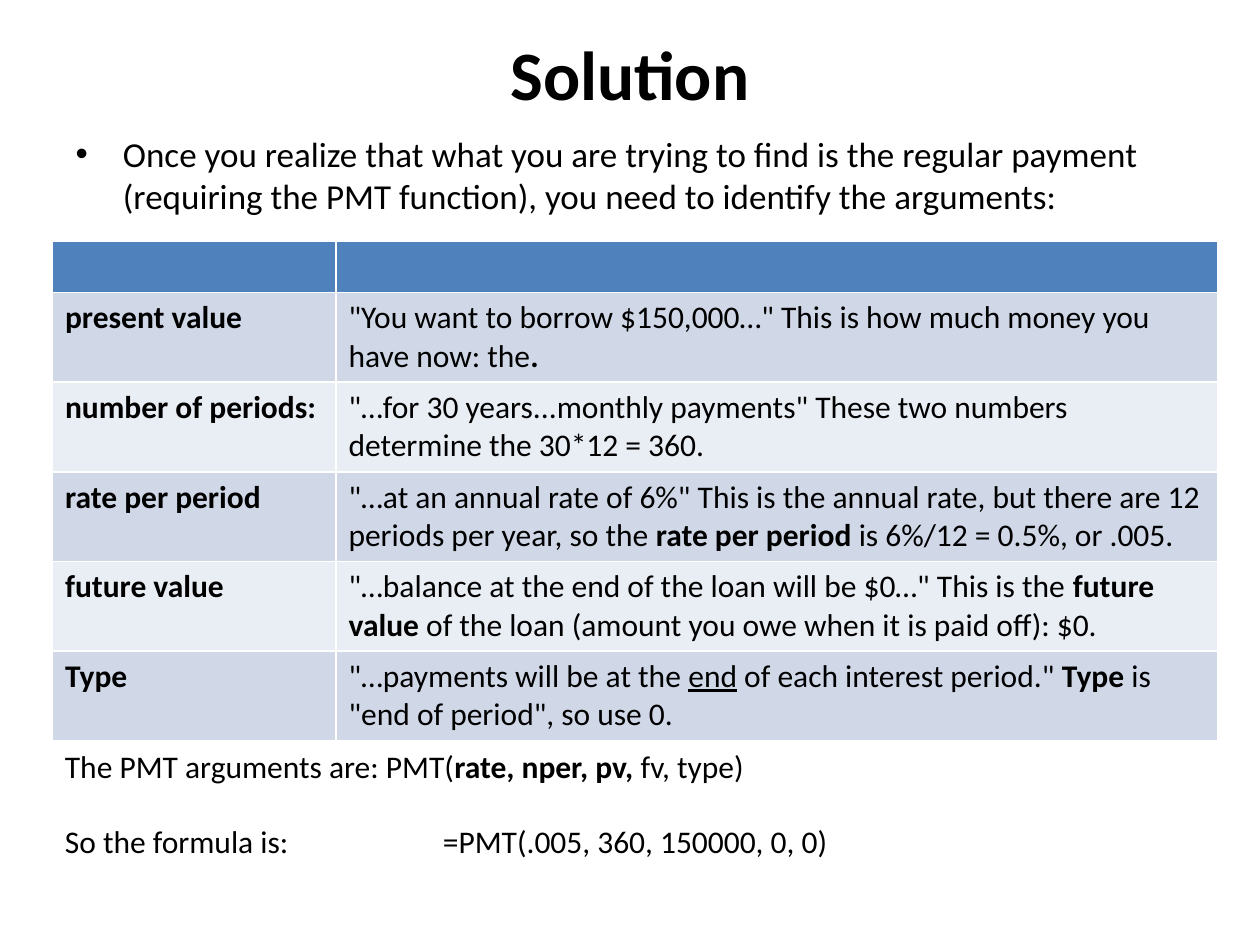
import pptx
import pptx.util
import pptx.dml.color
import pptx.enum.text
import pptx.oxml
import pptx.oxml.ns

Pt = pptx.util.Pt
MSO = pptx.enum.text.MSO_ANCHOR
ALIGN = pptx.enum.text.PP_ALIGN
FIT = pptx.enum.text.MSO_AUTO_SIZE
NS = pptx.oxml.ns.nsdecls("a")
BOLD = {"bold": True}
LINE = {"underline": True}


def color(code):
    return pptx.dml.color.RGBColor.from_string(code)


def apply(item, form):
    for key, value in form.items():
        setattr(item, key, value)


class Deck:
    font = "Calibri"
    ink = "000000"
    head = "4F81BD"
    bands = ("D0D8E8", "E9EDF4")
    rule = "FFFFFF"

    def __init__(self):
        self.file = pptx.Presentation()
        apply(self.file, {"slide_width": Pt(720), "slide_height": Pt(540)})
        self.slide = self.file.slides.add_slide(self.file.slide_layouts[1])

    def fill_text(self, para, parts, size):
        for text, extra in parts:
            run = para.add_run()
            run.text = text
            base = {"name": self.font, "size": Pt(size), "bold": False}
            apply(run.font, {**base, **extra})
            run.font.color.rgb = color(self.ink)

    def place(self, shape, box):
        names = ("left", "top", "width", "height")
        apply(shape, dict(zip(names, map(Pt, box))))

    def title(self, text, box, size):
        shape = self.slide.shapes.title
        self.place(shape, box)
        frame = shape.text_frame
        apply(frame, {"auto_size": FIT.NONE, "margin_top": 0,
                      "vertical_anchor": MSO.TOP})
        para = frame.paragraphs[0]
        para.alignment = ALIGN.CENTER
        self.fill_text(para, [(text, BOLD)], size)

    def body(self, text, box, size):
        shape = self.slide.placeholders[1]
        self.place(shape, box)
        frame = shape.text_frame
        frame.auto_size = FIT.NONE
        self.fill_text(frame.paragraphs[0], [(text, {})], size)

    def edge(self, cell):
        props = cell._tc.get_or_add_tcPr()
        for index, side in enumerate("LRTB"):
            props.insert(index, pptx.oxml.parse_xml(
                f'<a:ln{side} {NS} w="{Pt(1)}"><a:solidFill>'
                f'<a:srgbClr val="{self.rule}"/></a:solidFill></a:ln{side}>'))

    def table(self, rows, box, widths, heights, size):
        shape = self.slide.shapes.add_table(
            len(rows), len(widths), *map(Pt, box))
        grid = shape.table
        for col, width in zip(grid.columns, widths):
            col.width = Pt(width)
        for r, parts in enumerate(rows):
            grid.rows[r].height = Pt(heights[min(r, 1)])
            for c, text in enumerate(parts):
                cell = grid.cell(r, c)
                cell.fill.solid()
                fill = self.bands[(r - 1) % 2] if r else self.head
                cell.fill.fore_color.rgb = color(fill)
                self.edge(cell)
                self.fill_text(cell.text_frame.paragraphs[0], text, size)

    def note(self, lines, box, size, gap, tab):
        frame = self.slide.shapes.add_textbox(*map(Pt, box)).text_frame
        frame.word_wrap = True
        for index, parts in enumerate(lines):
            para = frame.add_paragraph() if index else frame.paragraphs[0]
            if index:
                para.space_before = Pt(gap)
            self.fill_text(para, parts, size)
            para._p.get_or_add_pPr().append(pptx.oxml.parse_xml(
                f'<a:tabLst {NS}><a:tab pos="{Pt(tab)}" algn="l"/></a:tabLst>'))


ROWS = [
    ([], []),
    ([("present value", BOLD)],
     [('"You want to borrow $150,000…" This is how much money you '
       'have now: the', {}), (".", BOLD)]),
    ([("number of periods:", BOLD)],
     [('"…for 30 years...monthly payments" These two numbers '
       'determine the 30*12 = 360.', {})]),
    ([("rate per period", BOLD)],
     [('"…at an annual rate of 6%" This is the annual rate, but there '
       'are 12 periods per year, so the ', {}),
      ("rate per period ", BOLD), ("is 6%/12 = 0.5%, or .005.", {})]),
    ([("future value", BOLD)],
     [('"…balance at the end of the loan will be $0…" This is the ', {}),
      ("future value", BOLD),
      (" of the loan (amount you owe when it is paid off): $0.", {})]),
    ([("Type", BOLD)],
     [('"…payments will be at the ', {}), ("end", LINE),
      (' of each interest period." ', {}), ("Type", BOLD),
      (' is "end of period", so use 0.', {})]),
]

NOTES = [
    [("The PMT arguments are: PMT(", {}), ("rate, nper, pv, ", BOLD),
     ("fv, type)", {})],
    [("So the formula is:\t=PMT(.005, 360, 150000, 0, 0)", {})],
]


def main():
    deck = Deck()
    deck.title("Solution", (36, 18, 648, 90), 39.6)
    deck.body("Once you realize that what you are trying to find is the "
              "regular payment (requiring the PMT function), you need to "
              "identify the arguments:", (36, 72, 648, 456), 20)
    deck.table(ROWS, (30, 138, 666, 285), (162, 504), (29, 51.2), 18)
    deck.note(NOTES, (30, 423.5, 666, 73), 18, 21, 216)
    deck.file.save("out.pptx")


if __name__ == "__main__":
    main()
